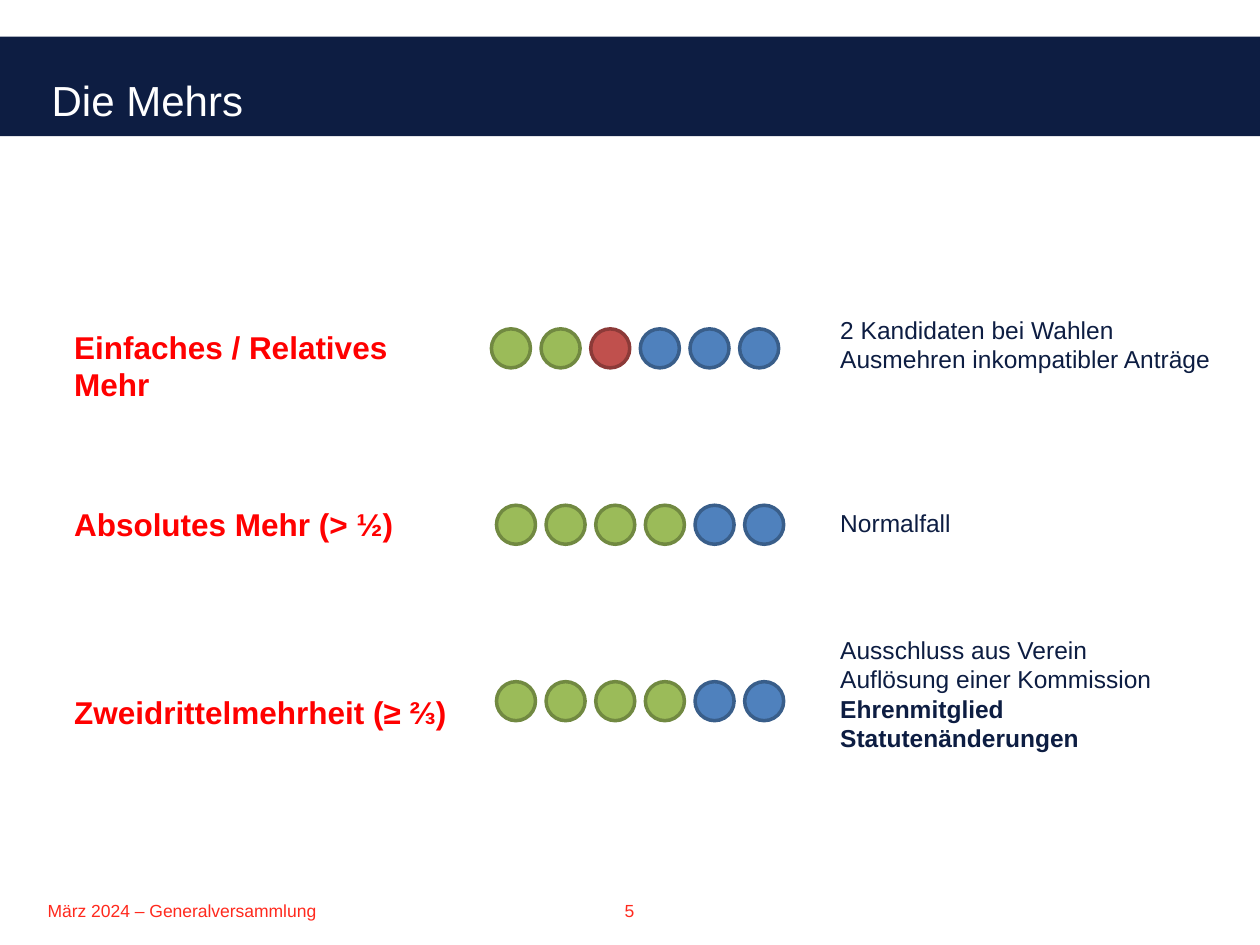
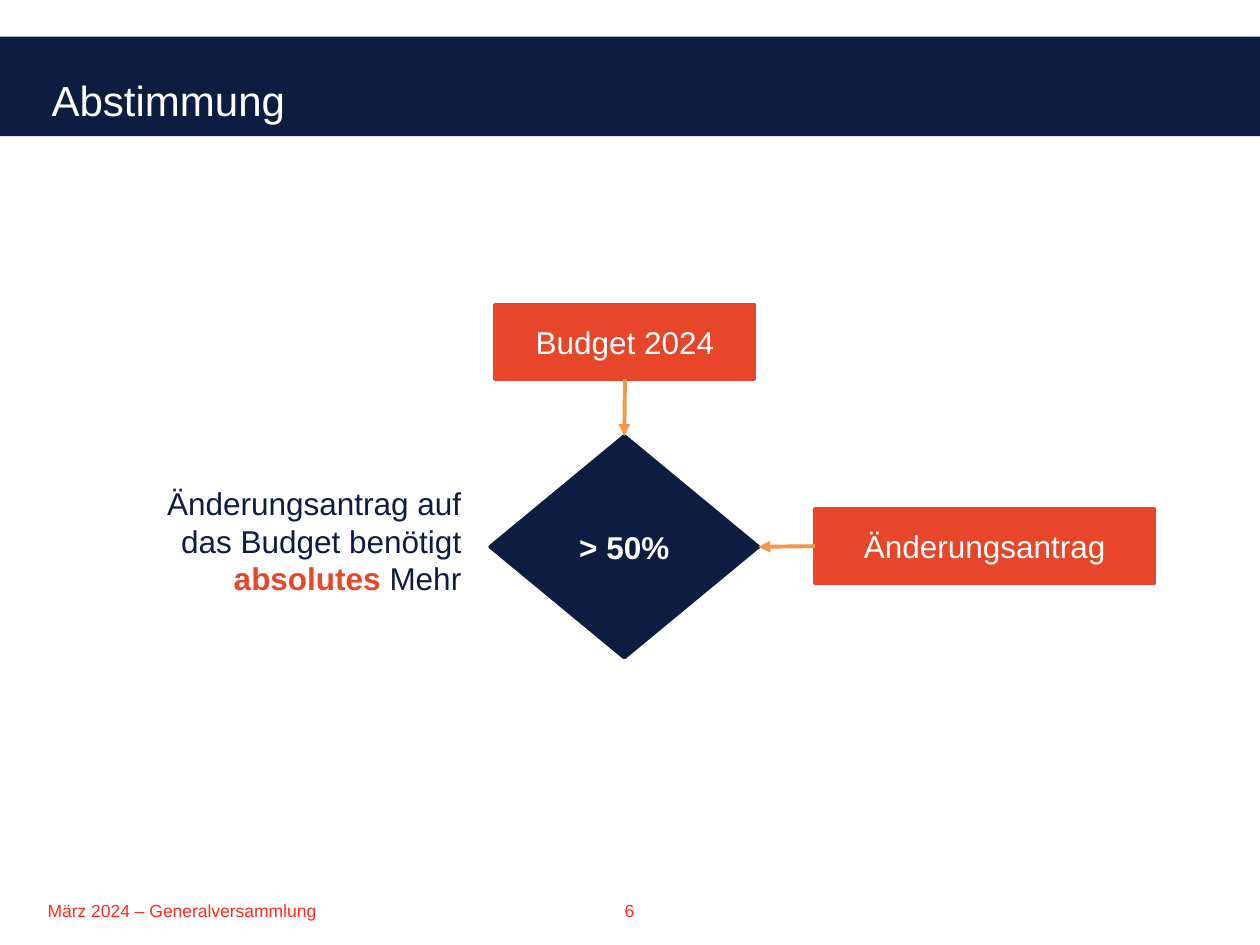
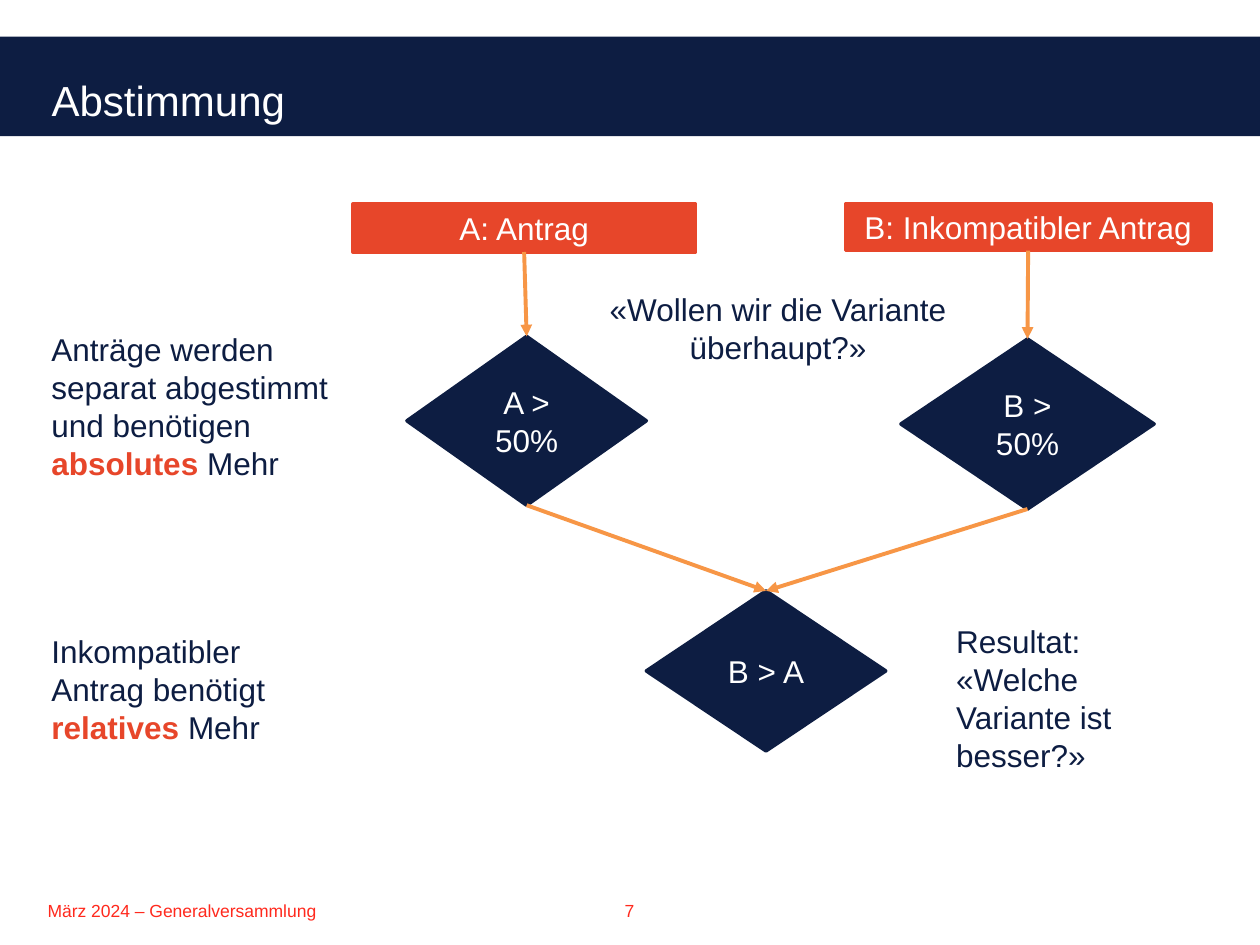
from lxml.etree import SubElement
from pptx import Presentation
from pptx.dml.color import RGBColor
from pptx.enum.shapes import MSO_CONNECTOR, MSO_SHAPE
from pptx.enum.text import MSO_ANCHOR, MSO_AUTO_SIZE, PP_ALIGN
from pptx.oxml.ns import qn
from pptx.util import Inches, Pt

SLIDE_WIDTH, SLIDE_HEIGHT = Inches(10), Inches(7.5)
COLUMNS, ROWS = 100, 75
FONT = "Arial"
COLORS = {
    "navy": "0D1D42",
    "orange_red": "E7462A",
    "arrow": "F79646",
    "footer": "FF291D",
    "majority": "FF0000",
    "white": "FFFFFF",
}
VOTES = {
    "green": ("9BBB59", "718941"),
    "red": ("C0504D", "8C3A38"),
    "blue": ("4F81BD", "395E8A"),
}
TOP, LEFT, BOTTOM, RIGHT = range(4)
VOTE_SIZE = 3.1
VOTE_STEP = 19.7 / 5


def rgb(color):
    return RGBColor.from_string(color)


def cells(column, row, width, height):
    across, down = SLIDE_WIDTH / COLUMNS, SLIDE_HEIGHT / ROWS
    return [round(v) for v in (column * across, row * down, width * across, height * down)]


def style_run(run, size, color, bold=False):
    run.font.name = FONT
    run.font.size = Pt(size)
    run.font.bold = bold
    run.font.color.rgb = rgb(COLORS[color])


def style_frame(frame, size, color, bold=False, align=PP_ALIGN.LEFT):
    for paragraph in frame.paragraphs:
        paragraph.alignment = align
        for run in paragraph.runs:
            style_run(run, size, color, bold)


def set_insets(frame, vertical):
    frame.word_wrap = True
    frame.margin_left = frame.margin_right = Inches(0.1)
    frame.margin_top = frame.margin_bottom = Inches(vertical)


def paint(shape, fill, line):
    shape.shadow.inherit = False
    shape.fill.solid()
    shape.fill.fore_color.rgb = rgb(fill)
    shape.line.color.rgb = rgb(line)
    shape.line.width = Pt(2)


def add_text(slide, area, text, size=18, color="navy", bold=False,
             align=PP_ALIGN.LEFT, vertical=0.1):
    label = slide.shapes.add_textbox(*cells(*area))
    set_insets(label.text_frame, vertical)
    label.text_frame.text = text
    style_frame(label.text_frame, size, color, bold, align)
    return label


def add_rule(slide, area, lead, majority, align=PP_ALIGN.LEFT):
    rule = add_text(slide, area, lead, align=align)
    paragraph = rule.text_frame.paragraphs[0]
    for text, color, bold in ((majority, "orange_red", True), ("Mehr", "navy", False)):
        run = paragraph.add_run()
        run.text = text
        style_run(run, 18, color, bold)


def add_node(slide, kind, area, text, color, bold=False):
    node = slide.shapes.add_shape(kind, *cells(*area))
    paint(node, COLORS[color], COLORS[color])
    set_insets(node.text_frame, 0.05)
    node.text_frame.text = text
    style_frame(node.text_frame, 18, "white", bold, PP_ALIGN.CENTER)
    return node


def add_motion(slide, area, text):
    return add_node(slide, MSO_SHAPE.FLOWCHART_PROCESS, area, text, "orange_red")


def add_decision(slide, area, text, bold=False):
    return add_node(slide, MSO_SHAPE.FLOWCHART_DECISION, area, text, "navy", bold)


def add_arrow(slide, source, source_side, target, target_side):
    arrow = slide.shapes.add_connector(MSO_CONNECTOR.STRAIGHT, 0, 0, 0, 0)
    arrow.begin_connect(source, source_side)
    arrow.end_connect(target, target_side)
    arrow.line.color.rgb = rgb(COLORS["arrow"])
    arrow.line.width = Pt(2.25)
    SubElement(arrow.line._get_or_add_ln(), qn("a:tailEnd"), type="triangle")
    SubElement(arrow._element.spPr, qn("a:effectLst"))


def add_votes(slide, column, row, votes):
    group = slide.shapes.add_group_shape()
    for index, vote in enumerate(votes):
        area = cells(column + index * VOTE_STEP, row, VOTE_SIZE, VOTE_SIZE)
        paint(group.shapes.add_shape(MSO_SHAPE.OVAL, *area), *VOTES[vote])


def share_band_and_footer(layout, slide):
    for placeholder in list(layout.placeholders)[1:]:
        placeholder._element.getparent().remove(placeholder._element)
    band = slide.shapes.add_shape(MSO_SHAPE.RECTANGLE, *cells(0, 2.9, COLUMNS, 7.9))
    paint(band, COLORS["navy"], COLORS["navy"])
    band.line.fill.background()
    footer = add_text(slide, (2.8, 70.9, 28.3, 3.6), "März 2024 – Generalversammlung",
                      10, "footer", vertical=0.05)
    for shared in (band, footer):
        layout.shapes._spTree.append(shared._element)


def add_slide(prs, layout, heading, number):
    slide = prs.slides.add_slide(layout)
    title = slide.shapes.title
    title.left, title.top, title.width, title.height = cells(3.1, 4.8, 68.2, 7.7)
    frame = title.text_frame
    frame.text = heading
    frame.auto_size = MSO_AUTO_SIZE.NONE
    frame.vertical_anchor = MSO_ANCHOR.TOP
    set_insets(frame, 0.05)
    style_frame(frame, 24, "white")
    frame.paragraphs[0].line_spacing = 1.15
    frame.paragraphs[0].space_after = Pt(16)
    add_text(slide, (28.7, 70.9, 42.5, 3.6), str(number), 10, "footer",
             align=PP_ALIGN.CENTER, vertical=0.05)
    return slide


def fill_majorities(slide):
    two_thirds = ["green"] * 4 + ["blue"] * 2
    simple = ["green"] * 2 + ["red"] + ["blue"] * 3
    for column, row, votes in ((39, 26.1, simple), (39.4, 40.1, two_thirds),
                               (39.4, 54.1, two_thirds)):
        add_votes(slide, column, row, votes)

    for row, majority in ((25, "Einfaches / Relatives Mehr"),
                          (39.1, "Absolutes Mehr (> ½)"),
                          (54, "Zweidrittelmehrheit (≥ ⅔)")):
        add_text(slide, (4.9, row, 33.3, 3.9), majority, 18, "majority", True)

    uses = [
        (24, 5.9, "2 Kandidaten bei Wahlen\nAusmehren inkompatibler Anträge"),
        (39.3, 3.1, "Normalfall"),
        (49.4, 12.4, "Ausschluss aus Verein\nAuflösung einer Kommission\n"
                     "Ehrenmitglied\nStatutenänderungen"),
    ]
    for row, height, use in uses:
        label = add_text(slide, (65.7, row, 35.2, height), use, 14)
    for paragraph in label.text_frame.paragraphs[2:]:
        paragraph.runs[0].font.bold = True


def fill_budget_vote(slide):
    budget = add_motion(slide, (39.3, 24.2, 20.6, 5.9), "Budget 2024")
    amendment = add_motion(slide, (64.7, 40.4, 26.9, 5.9), "Änderungsantrag")
    vote = add_decision(slide, (38.9, 34.6, 21.3, 17.6), "> 50%", True)
    add_arrow(slide, budget, BOTTOM, vote, TOP)
    add_arrow(slide, amendment, LEFT, vote, RIGHT)
    add_rule(slide, (12, 37.4, 25.6, 12), "Änderungsantrag auf das Budget benötigt ",
             "absolutes ", PP_ALIGN.RIGHT)


def fill_incompatible_vote(slide):
    motion_a = add_motion(slide, (28, 16.2, 27.2, 3.8), "A: Antrag")
    motion_b = add_motion(slide, (67.1, 16.2, 29, 3.7), "B: Inkompatibler Antrag")
    vote_a = add_decision(slide, (32.3, 26.7, 19, 13.4), "A > 50%")
    vote_b = add_decision(slide, (71.5, 26.9, 20.1, 13.5), "B > 50%")
    runoff = add_decision(slide, (51.3, 46.9, 19, 12.7), "B > A")
    for motion, vote in ((motion_a, vote_a), (motion_b, vote_b)):
        add_arrow(slide, motion, BOTTOM, vote, TOP)
        add_arrow(slide, vote, BOTTOM, runoff, TOP)

    add_rule(slide, (3.1, 25.2, 25, 14.2),
             "Anträge werden separat abgestimmt und benötigen ", "absolutes ")
    add_rule(slide, (3.1, 49.2, 21.1, 9.7), "Inkompatibler Antrag benötigt ", "relatives ")
    add_text(slide, (47.4, 22, 28.7, 6.4), "«Wollen wir die Variante überhaupt?»",
             align=PP_ALIGN.CENTER)
    add_text(slide, (74.9, 48.4, 21.1, 11.2), "Resultat: «Welche Variante ist besser?»")


def main():
    prs = Presentation()
    prs.slide_width, prs.slide_height = SLIDE_WIDTH, SLIDE_HEIGHT
    layout = prs.slide_layouts.get_by_name("Title Only")
    contents = [
        ("Die Mehrs", fill_majorities),
        ("Abstimmung", fill_budget_vote),
        ("Abstimmung", fill_incompatible_vote),
    ]
    for number, (heading, fill) in enumerate(contents, start=5):
        fill(add_slide(prs, layout, heading, number))
    share_band_and_footer(layout, prs.slides[0])
    prs.save("out.pptx")


if __name__ == "__main__":
    main()
